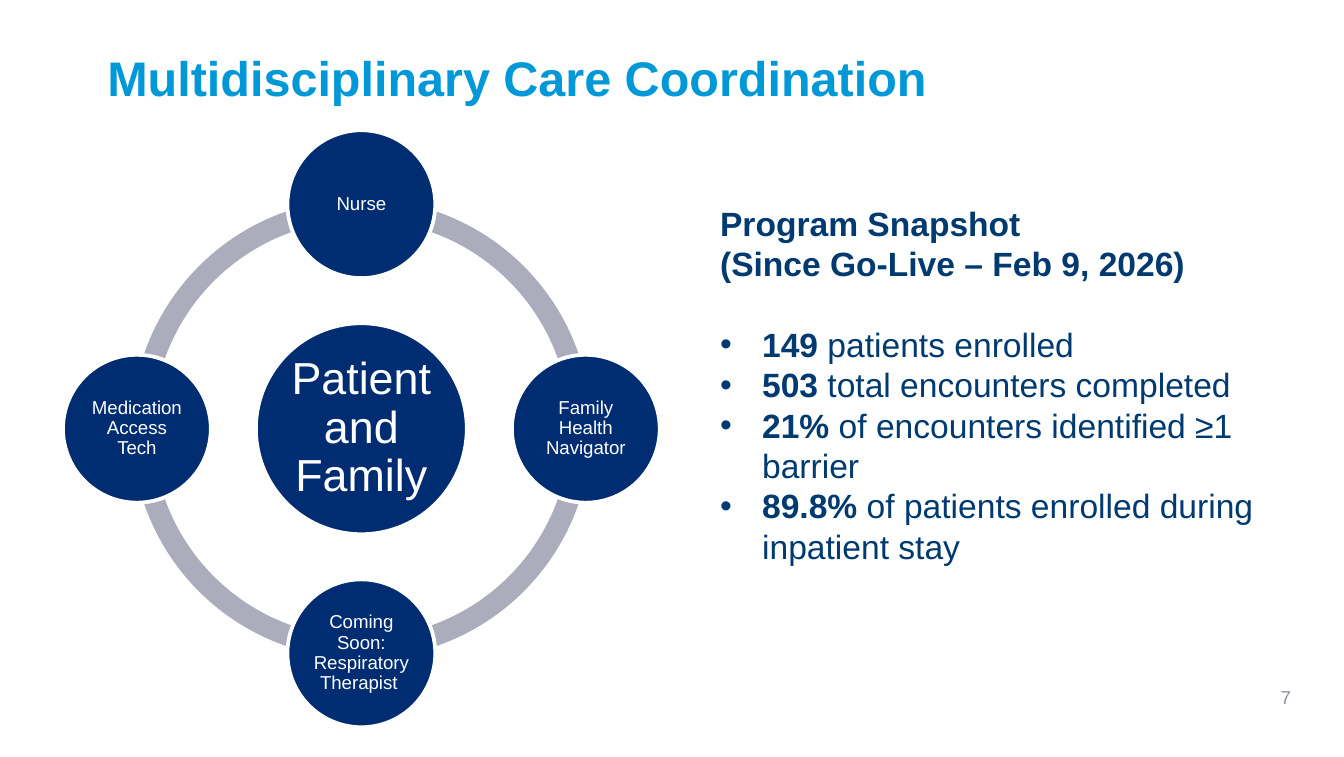
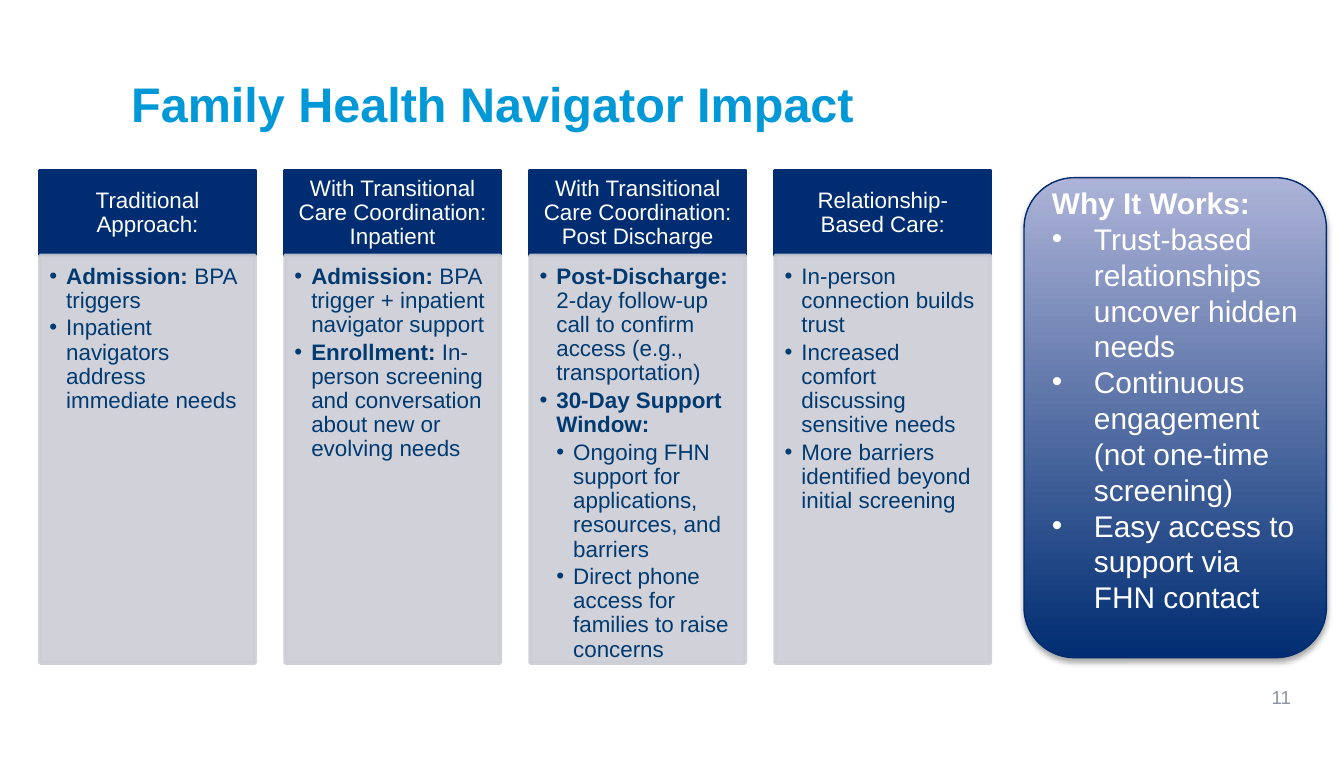
from lxml import etree
from pptx import Presentation, util as u
from pptx.dml.color import RGBColor
from pptx.enum import shapes, text
from pptx.oxml.ns import qn

COLORS = {
    "navy": "002D72", "ink": "003A70", "sky": "0098D7", "white": "FFFFFF",
    "ring": "ABADBC", "panel": "CCCDD5", "lilac": "ADB3D8",
    "edge": "002C6F", "number": "8C91A4", "black": "000000",
}
FONT = "Arial"
LEFT, CENTER, RIGHT = text.PP_ALIGN.LEFT, text.PP_ALIGN.CENTER, text.PP_ALIGN.RIGHT
TOP, MIDDLE, BOTTOM = text.MSO_ANCHOR.TOP, text.MSO_ANCHOR.MIDDLE, text.MSO_ANCHOR.BOTTOM
SHAPE = shapes.MSO_SHAPE
INSETS = (7.2, 3.6, 7.2, 3.6)


def draw(slide, kind, box, fill=None, line=None, weight=2, alpha=None):
    """Add a preset shape, or a text box when kind is None."""
    box = [u.Pt(value) for value in box]
    if kind is None:
        return slide.shapes.add_textbox(*box)
    shape = slide.shapes.add_shape(kind, *box)
    shape.shadow.inherit = False
    shape.fill.solid()
    shape.fill.fore_color.rgb = RGBColor.from_string(COLORS[fill])
    if line:
        shape.line.color.rgb = RGBColor.from_string(COLORS[line])
        shape.line.width = u.Pt(weight)
    else:
        shape.line.fill.background()
    if alpha:
        for color in shape._element.spPr.iter(qn("a:srgbClr")):
            etree.SubElement(color, qn("a:alpha"), val=str(alpha * 1000))
    return shape


def write(shape, paragraphs, size, color, anchor=TOP, insets=INSETS, hang=22.5, **formats):
    """Fill a shape with (bullet level, bold part, plain part) paragraphs."""
    frame = shape.text_frame
    frame.word_wrap = True
    frame.vertical_anchor = anchor
    for side, inset in zip(("left", "top", "right", "bottom"), insets):
        setattr(frame, f"margin_{side}", u.Pt(inset))
    for index, (level, bold, plain) in enumerate(paragraphs):
        paragraph = frame.add_paragraph() if index else frame.paragraphs[0]
        for name, value in {"alignment": LEFT, **formats}.items():
            setattr(paragraph, name, value)
        if level:
            props = paragraph._p.get_or_add_pPr()
            props.set("marL", str(u.Pt(hang * level)))
            props.set("indent", str(-u.Pt(hang)))
            etree.SubElement(props, qn("a:buFont"), typeface=FONT)
            etree.SubElement(props, qn("a:buChar"), char="•")
        for words, is_bold in ((bold, True), (plain, False)):
            if words:
                run = paragraph.add_run()
                run.text = words
                look = {"name": FONT, "size": u.Pt(size), "bold": is_bold}
                for name, value in look.items():
                    setattr(run.font, name, value)
                run.font.color.rgb = RGBColor.from_string(COLORS[color])


deck = Presentation()
deck.slide_width, deck.slide_height = u.Pt(720), u.Pt(405.36)

# Titles and slide numbers
slides = []
for title, title_box, number in (
    ("Multidisciplinary Care Coordination", (50.4, 21.6, 503.3, 38.9), "7"),
    ("Family Health Navigator Impact", (63.2, 35.3, 581.8, 38.9), "11"),
):
    slide = deck.slides.add_slide(deck.slide_layouts[6])
    write(draw(slide, None, title_box), [(0, title, "")], 26, "sky", BOTTOM)
    write(draw(slide, None, (530.9, 362.2, 167.8, 21.6)), [(0, "", number)],
          10, "number", MIDDLE, alignment=RIGHT)
    slides.append(slide)
coordination, impact = slides

# Care team: ring of four quarter arcs (54 units = 90 degrees)
center_x, center_y = 193.6, 229.6
ring, hub, member, reach = 246.2, 113, 79.2, 120.25
for start in (108, 54, 0, 162):
    arc = draw(coordination, SHAPE.BLOCK_ARC,
               (center_x - ring / 2, center_y - ring / 2, ring, ring), "ring")
    for index, value in enumerate((start, (start + 54) % 216, 0.046)):
        arc.adjustments[index] = value

# Care team: hub and members
for role, across, down, diameter, size, inset in (
    ("Patient and Family", 0, 0, hub, 24, 2.2),
    ("Nurse", 0, -1, member, 10, 0.9),
    ("Family Health Navigator", 1, 0, member, 10, 0.9),
    ("Coming Soon: Respiratory Therapist ", 0, 1, member, 10, 0.9),
    ("Medication Access Tech", -1, 0, member, 10, 0.9),
):
    circle = draw(coordination, SHAPE.OVAL,
                  (center_x + across * reach - diameter / 2,
                   center_y + down * reach - diameter / 2, diameter, diameter),
                  "navy", "white")
    write(circle, [(0, "", role)], size, "white", MIDDLE, (inset,) * 4,
          alignment=CENTER, line_spacing=0.9)

# Program snapshot
snapshot = draw(coordination, None, (378.7, 105.1, 304.6, 225.4))
write(snapshot, [
    (0, "Program Snapshot", ""),
    (0, "(Since Go-Live – Feb 9, 2026)", ""),
    (1, "149", " patients enrolled"),
    (1, "503", " total encounters completed"),
    (1, "21%", " of encounters identified ≥1 barrier"),
    (1, "89.8%", " of patients enrolled during inpatient stay"),
], 18, "ink")
snapshot.text_frame.paragraphs[2].space_before = u.Pt(21.6)

# Care approaches: four columns
approaches = (
    ("Traditional Approach:", [
        (1, "Admission: ", "BPA triggers"),
        (1, "", "Inpatient navigators address immediate needs"),
    ]),
    ("With Transitional Care Coordination: Inpatient", [
        (1, "Admission:", " BPA trigger + inpatient navigator support"),
        (1, "Enrollment:", " In-person screening and conversation about new or evolving needs"),
    ]),
    ("With Transitional Care Coordination: Post Discharge", [
        (1, "Post-Discharge:", " 2-day follow-up call to confirm access (e.g., transportation)"),
        (1, "30-Day Support Window:", ""),
        (2, "", "Ongoing FHN support for applications, resources, and barriers"),
        (2, "", "Direct phone access for families to raise concerns"),
    ]),
    ("Relationship-Based Care:", [
        (1, "", "In-person connection builds trust"),
        (1, "", "Increased comfort discussing sensitive needs"),
        (1, "", "More barriers identified beyond initial screening"),
    ]),
)
for column, (approach, steps) in enumerate(approaches):
    left = 21.5 + column * 131.3
    heading = draw(impact, SHAPE.RECTANGLE, (left, 91.4, 115.2, 45.4), "navy", "navy")
    write(heading, [(0, "", approach)], 12, "white", MIDDLE, (6.7, 3.8, 6.7, 3.8),
          alignment=CENTER, line_spacing=0.9)
    panel = draw(impact, SHAPE.RECTANGLE, (left, 136.8, 115.2, 218.2),
                 "panel", "panel", alpha=90)
    write(panel, steps, 12, "ink", TOP, (5, 5, 6.7, 7.5), hang=9,
          line_spacing=0.9, space_after=u.Pt(1.8))

# Why it works: gradient card with a soft shadow
reasons = draw(impact, SHAPE.ROUNDED_RECTANGLE, (548.6, 95.2, 162, 257), "navy", "edge", 0.75)
reasons.fill.gradient()
reasons.fill.gradient_angle = 90
for stop, color, position in zip(reasons.fill.gradient_stops, ("navy", "lilac"), (0, 1)):
    stop.color.rgb = RGBColor.from_string(COLORS[color])
    stop.position = position
shadow = etree.SubElement(
    reasons._element.spPr.find(qn("a:effectLst")), qn("a:outerShdw"),
    blurRad=str(u.Pt(3.1)), dist=str(u.Pt(1.8)), dir="5400000", rotWithShape="0")
shade = etree.SubElement(shadow, qn("a:srgbClr"), val=COLORS["black"])
etree.SubElement(shade, qn("a:alpha"), val="35000")
write(reasons, [
    (0, "Why It Works:", ""),
    (1, "", "Trust-based relationships uncover hidden needs"),
    (1, "", "Continuous engagement (not one-time screening)"),
    (1, "", "Easy access to support via FHN contact"),
], 16, "white", MIDDLE, (7.2, 3.6, 7.2, 22.8))

deck.save("out.pptx")
